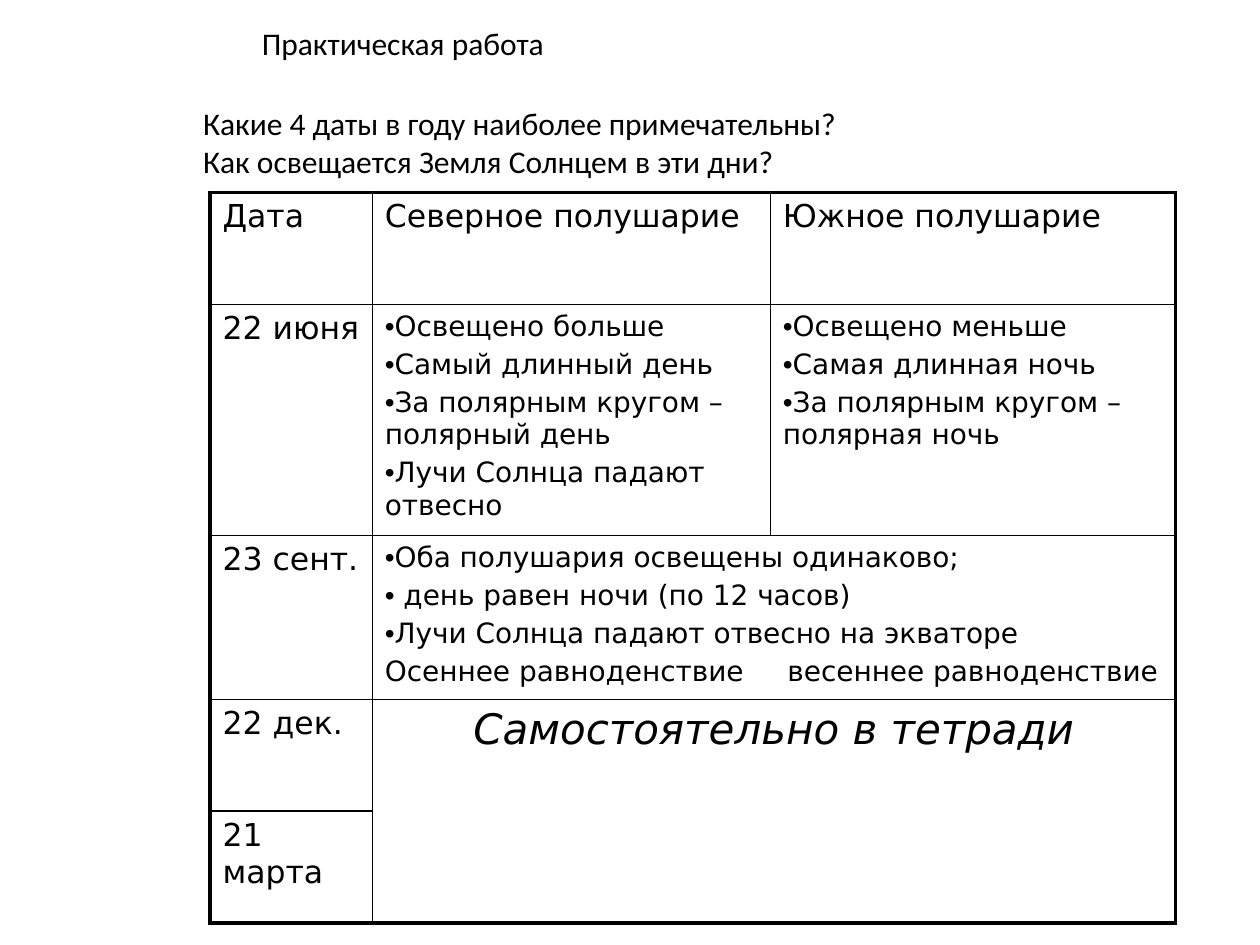
from dataclasses import dataclass

from lxml import etree
from pptx import Presentation
from pptx.dml.color import RGBColor
from pptx.enum.text import MSO_ANCHOR, MSO_AUTO_SIZE, PP_ALIGN
from pptx.oxml.ns import qn
from pptx.util import Pt

CENTER, LEFT, TOP = PP_ALIGN.CENTER, PP_ALIGN.LEFT, MSO_ANCHOR.TOP
FIT_SHAPE = MSO_AUTO_SIZE.SHAPE_TO_FIT_TEXT
NO_STYLE = "{2D5ABB26-0587-4C30-8999-92F81FD0307C}"


@dataclass(frozen=True)
class Theme:
    """Colours, fonts, type sizes and line widths of the slide."""
    ink: str = "000000"
    heading_font: str = "Calibri"
    table_font: str = "DejaVu Sans"
    bullet_font: str = "Arial"
    normal: int = 18
    small: int = 16
    large: int = 24
    thin: float = 1
    thick: float = 2.25


THEME = Theme()
COLUMNS = [92.75, 227.5, 231.5]
ROWS = [64, 132, 93.5, 64, 64]
MERGES = [(2, 1, 2, 2), (3, 1, 4, 2)]
TAB_STOP = 230
SMALL = {"size": THEME.small}
LABELS = {
    (0, 0): "Дата", (0, 1): "Северное полушарие", (0, 2): "Южное полушарие",
    (1, 0): "22 июня", (2, 0): "23 сент.", (3, 0): "22 дек.", (4, 0): "21 марта",
}
BULLETS = {
    (1, 1): ["Освещено больше", "Самый длинный день",
             "За полярным кругом –полярный день", "Лучи Солнца падают отвесно"],
    (1, 2): ["Освещено меньше", "Самая длинная ночь",
             "За полярным кругом – полярная ночь"],
    (2, 1): ["Оба полушария освещены одинаково;", " день равен ночи (по 12 часов)",
             "Лучи Солнца падают отвесно на экваторе"],
}
EQUINOXES = "Осеннее равноденствие\tвесеннее равноденствие"
TASK = "Самостоятельно в тетради"


def add_text(tf, text, first, align=LEFT, before=0, **font):
    """Write one paragraph and return it."""
    p = tf.paragraphs[0] if first else tf.add_paragraph()
    p.alignment, p.space_before = align, Pt(before)
    r = p.add_run()
    r.text = text
    values = {"size": THEME.normal, "name": THEME.heading_font, "bold": False, **font}
    values["size"] = Pt(values["size"])
    for key, value in values.items():
        setattr(r.font, key, value)
    r.font.color.rgb = RGBColor.from_string(THEME.ink)
    return p


def add_cell_text(cell, text, first=True, size=THEME.normal, **values):
    """Write one table paragraph with a fifth of its size before it."""
    return add_text(cell.text_frame, text, first, before=size / 5, size=size,
                    name=THEME.table_font, **values)


def add_bullet(p):
    """Give a paragraph a bullet that sits directly against its text."""
    pPr = p._p.get_or_add_pPr()
    pPr.set("marL", "0")
    pPr.set("indent", "0")
    etree.SubElement(pPr, qn("a:buFont"), typeface=THEME.bullet_font)
    etree.SubElement(pPr, qn("a:buChar"), char="•")


def add_tab_stop(p, position):
    """Set a left tab stop in a paragraph."""
    tabs = etree.SubElement(p._p.get_or_add_pPr(), qn("a:tabLst"))
    etree.SubElement(tabs, qn("a:tab"), pos=str(Pt(position)), algn="l")


def set_borders(cell, row, col):
    """Draw thick lines on the table's outline and thin ones inside it."""
    height, width = (cell.span_height, cell.span_width) if cell.is_merge_origin else (1, 1)
    outer = {"lnL": col == 0, "lnR": col + width == len(COLUMNS),
             "lnT": row == 0, "lnB": row + height == len(ROWS)}
    tcPr = cell._tc.get_or_add_tcPr()
    for tag, is_outer in outer.items():
        weight = THEME.thick if is_outer else THEME.thin
        line = etree.SubElement(tcPr, qn(f"a:{tag}"), w=str(Pt(weight)))
        fill = etree.SubElement(line, qn("a:solidFill"))
        etree.SubElement(fill, qn("a:srgbClr"), val=THEME.ink)


def add_title(s, text):
    """Place and format the title placeholder."""
    title = s.shapes.title
    title.left, title.top, title.width, title.height = Pt(123), Pt(10), Pt(214.5), Pt(29)
    tf = title.text_frame
    tf.word_wrap, tf.auto_size, tf.vertical_anchor = False, FIT_SHAPE, TOP
    add_text(tf, text, True, CENTER)


def add_questions(s, lines):
    """Add the text box with the questions."""
    tf = s.shapes.add_textbox(Pt(109), Pt(55.75), Pt(461.5), Pt(50.5)).text_frame
    tf.word_wrap, tf.auto_size = False, FIT_SHAPE
    for i, line in enumerate(lines):
        add_text(tf, line, i == 0)


def add_grid(s):
    """Add the empty table with its merged cells and borders."""
    table = s.shapes.add_table(len(ROWS), len(COLUMNS), Pt(120), Pt(110),
                               Pt(sum(COLUMNS)), Pt(sum(ROWS))).table
    table.first_row = table.horz_banding = False
    table._tbl.tblPr.find(qn("a:tableStyleId")).text = NO_STYLE
    for column, width in zip(table.columns, COLUMNS):
        column.width = Pt(width)
    for row, height in zip(table.rows, ROWS):
        row.height = Pt(height)
    for top, left, bottom, right in MERGES:
        table.cell(top, left).merge(table.cell(bottom, right))
    for row in range(len(ROWS)):
        for col in range(len(COLUMNS)):
            cell = table.cell(row, col)
            if not cell.is_spanned:
                set_borders(cell, row, col)
            cell.fill.background()
    return table


def fill_grid(table):
    """Write the contents of the table."""
    for place, text in LABELS.items():
        add_cell_text(table.cell(*place), text)
    for place, lines in BULLETS.items():
        for i, line in enumerate(lines):
            add_bullet(add_cell_text(table.cell(*place), line, i == 0, **SMALL))
    add_tab_stop(add_cell_text(table.cell(2, 1), EQUINOXES, False, **SMALL), TAB_STOP)
    add_cell_text(table.cell(3, 1), TASK, size=THEME.large, align=CENTER, italic=True)


def main():
    """Build the slide and save it."""
    prs = Presentation()
    prs.slide_width, prs.slide_height = Pt(720), Pt(540)
    s = prs.slides.add_slide(prs.slide_layouts[5])
    add_title(s, "Практическая работа")
    add_questions(s, ["Какие 4 даты в году наиболее примечательны?",
                      "Как освещается Земля Солнцем в эти дни?"])
    fill_grid(add_grid(s))
    prs.save("out.pptx")


if __name__ == "__main__":
    main()
